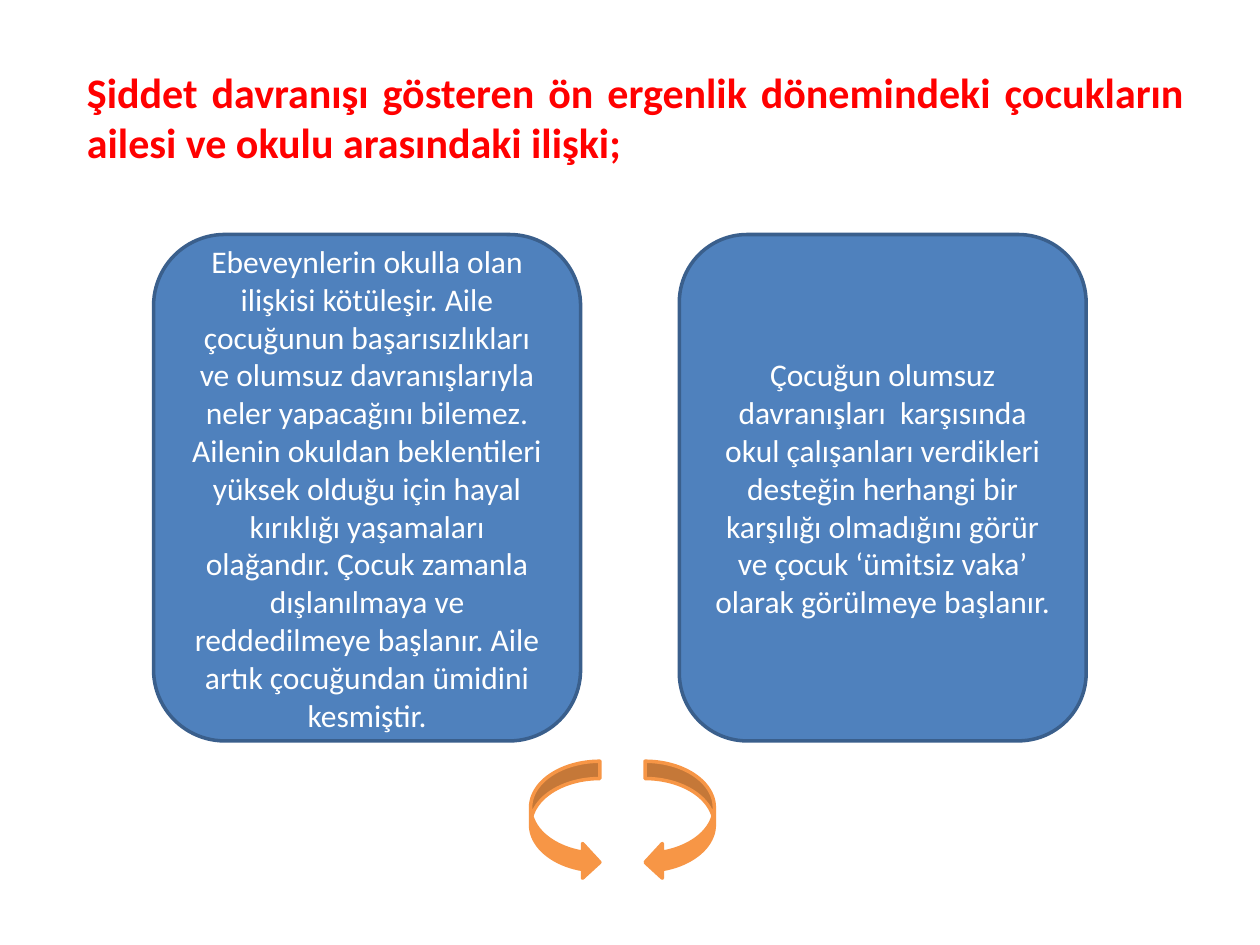
from pptx import Presentation
from pptx.dml.color import RGBColor
from pptx.enum.shapes import MSO_SHAPE
from pptx.enum.text import MSO_ANCHOR, MSO_AUTO_SIZE, PP_ALIGN
from pptx.util import Pt

ROUNDED = MSO_SHAPE.ROUNDED_RECTANGLE
RIGHT_ARROW = MSO_SHAPE.CURVED_RIGHT_ARROW
LEFT_ARROW = MSO_SHAPE.CURVED_LEFT_ARROW
MIDDLE = MSO_ANCHOR.MIDDLE
NO_FIT = MSO_AUTO_SIZE.NONE
CENTER, JUSTIFY = PP_ALIGN.CENTER, PP_ALIGN.JUSTIFY
TITLE_ONLY = 5

BLUE, DARK_BLUE, ORANGE, RED, WHITE = "4F81BD", "3A5F8C", "F79646", "FF0000", "FFFFFF"

HEADING = ("Şiddet davranışı gösteren ön ergenlik dönemindeki çocukların "
           "ailesi ve okulu arasındaki ilişki;")
FAMILY = ("Ebeveynlerin okulla olan ilişkisi kötüleşir. Aile çocuğunun "
          "başarısızlıkları ve olumsuz davranışlarıyla neler yapacağını bilemez. "
          "Ailenin okuldan beklentileri yüksek olduğu için hayal kırıklığı "
          "yaşamaları olağandır. Çocuk zamanla dışlanılmaya ve reddedilmeye "
          "başlanır. Aile artık çocuğundan ümidini kesmiştir.")
SCHOOL = ("Çocuğun olumsuz davranışları  karşısında okul çalışanları verdikleri "
          "desteğin herhangi bir karşılığı olmadığını görür ve çocuk ‘ümitsiz "
          "vaka’ olarak görülmeye başlanır.")


def set_color(color_format, value):
    """Apply a hex string to a color format."""
    color_format.rgb = RGBColor.from_string(value)


def write(frame, text, size, color, align, bold=False):
    """Fill a text frame with one formatted paragraph."""
    frame.text = text
    paragraph = frame.paragraphs[0]
    font = paragraph.runs[0].font
    formats = (
        (frame, {"word_wrap": True, "auto_size": NO_FIT, "vertical_anchor": MIDDLE}),
        (paragraph, {"alignment": align}),
        (font, {"name": "Calibri", "size": Pt(size), "bold": bold}),
    )
    for target, values in formats:
        for attribute, value in values.items():
            setattr(target, attribute, value)
    set_color(font.color, color)


def add_filled(slide, kind, box, fill, line):
    """Add a flat preset shape in a box given in points."""
    shape = slide.shapes.add_shape(kind, *map(Pt, box))
    shape.shadow.inherit = False
    shape.fill.solid()
    set_color(shape.fill.fore_color, fill)
    set_color(shape.line.color, line)
    shape.line.width = Pt(2)
    return shape


def place_title(slide, box):
    """Move and format the title placeholder."""
    title = slide.shapes.title
    for side, value in zip(("left", "top", "width", "height"), box):
        setattr(title, side, Pt(value))
    write(title.text_frame, HEADING, 24, RED, JUSTIFY, bold=True)


def add_panels(slide, box):
    """Place the family panel at the left edge and the school panel at the right."""
    left, top, width, height = box
    family_width, school_width = 244, 232.5
    panels = (
        (left, family_width, FAMILY),
        (left + width - school_width, school_width, SCHOOL),
    )
    for x, panel_width, text in panels:
        panel = add_filled(slide, ROUNDED, (x, top, panel_width, height), BLUE, DARK_BLUE)
        write(panel.text_frame, text, 18, WHITE, CENTER)


def add_arrows(slide, box):
    """Place two facing curved arrows at the ends of the box."""
    left, top, width, height = box
    arrow_width = 39.6
    for kind, x in ((RIGHT_ARROW, left), (LEFT_ARROW, left + width - arrow_width)):
        add_filled(slide, kind, (x, top, arrow_width, height), ORANGE, ORANGE)


def main():
    """Build and save the slide."""
    deck = Presentation()
    deck.slide_width, deck.slide_height = Pt(720), Pt(540)
    slide = deck.slides.add_slide(deck.slide_layouts[TITLE_ONLY])
    place_title(slide, (42.5, 21.6, 641.5, 90))
    add_panels(slide, (87.8, 134, 532.9, 289.4))
    add_arrows(slide, (303.2, 435, 105, 67.7))
    deck.save("out.pptx")


if __name__ == "__main__":
    main()
